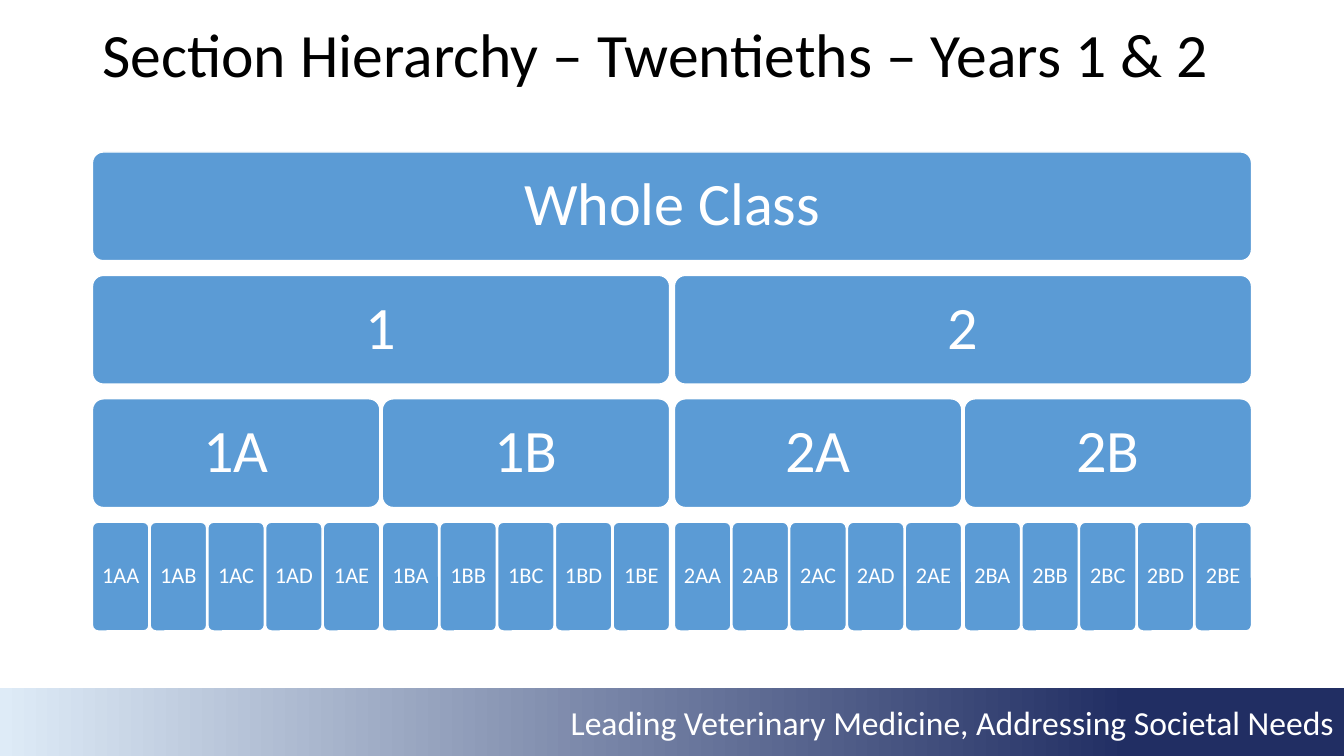
from pptx import Presentation
from pptx.dml.color import RGBColor
from pptx.enum.shapes import MSO_SHAPE
from pptx.enum.text import MSO_ANCHOR, PP_ALIGN
from pptx.util import Cm, Pt

TITLE = "Section Hierarchy – Twentieths – Years 1 & 2"
MOTTO = "Leading Veterinary Medicine, Addressing Societal Needs"
ROOT = "Whole Class"
SUFFIXES = ["12", "AB", "ABCDE"]

FONT = "Calibri"
BLACK, WHITE, BLUE = "000000", "FFFFFF", "5B9BD5"
GRADIENT = [(0.16, "212E63"), (1, "DEEBF7")]
PAGE_WIDTH, PAGE_HEIGHT = 33.87, 19.05
CHART_LEFT, CHART_TOP, CHART_WIDTH = 2.33, 3.83, 29.21
ROW_HEIGHT, ROW_PITCH = 2.74, 3.11
GAPS = [0.12, 0.06, 0.03]
SIZES = [43, 43, 43, 16]
INSETS = [0.53, 0.53, 0.53, 0.1]


def color(value):
    return RGBColor.from_string(value)


def write(shape, text, size, value, align, spacing=1.0):
    frame = shape.text_frame
    frame.word_wrap = True
    frame.vertical_anchor = MSO_ANCHOR.MIDDLE
    frame.text = text
    para = frame.paragraphs[0]
    para.alignment = align
    para.line_spacing = spacing
    span = para.runs[0]
    span.font.name = FONT
    span.font.size = Pt(size)
    span.font.color.rgb = color(value)


def add_block(page, text, left, width, depth):
    block = page.shapes.add_shape(
        MSO_SHAPE.ROUNDED_RECTANGLE, Cm(left), Cm(CHART_TOP + depth * ROW_PITCH),
        Cm(width), Cm(ROW_HEIGHT))
    block.adjustments[0] = 0.1
    block.shadow.inherit = False
    block.fill.solid()
    block.fill.fore_color.rgb = color(BLUE)
    block.line.color.rgb = color(WHITE)
    block.line.width = Pt(1)
    frame = block.text_frame
    frame.margin_left = frame.margin_right = Cm(INSETS[depth])
    frame.margin_top = frame.margin_bottom = Cm(INSETS[depth])
    write(block, text, SIZES[depth], WHITE, PP_ALIGN.CENTER, 0.9)


def add_section(page, name, left, width, depth=0):
    """Draw a section, then its equal subsections in the row below."""
    add_block(page, name or ROOT, left, width, depth)
    if depth == len(SUFFIXES):
        return
    suffixes, gap = SUFFIXES[depth], GAPS[depth]
    part = (width - gap * (len(suffixes) - 1)) / len(suffixes)
    for index, suffix in enumerate(suffixes):
        add_section(page, name + suffix, left + index * (part + gap), part, depth + 1)


def add_footer(page):
    band = page.shapes.add_shape(
        MSO_SHAPE.RECTANGLE, Cm(0), Cm(17.35), Cm(PAGE_WIDTH), Cm(1.7))
    band.shadow.inherit = False
    band.line.fill.background()
    band.fill.gradient()
    band.fill.gradient_angle = 180
    for stop, (position, value) in zip(band.fill.gradient_stops, GRADIENT):
        stop.position = position
        stop.color.rgb = color(value)
    write(band, MOTTO, 24, WHITE, PP_ALIGN.RIGHT)


def main():
    deck = Presentation()
    deck.slide_width, deck.slide_height = Cm(PAGE_WIDTH), Cm(PAGE_HEIGHT)
    page = deck.slides.add_slide(deck.slide_layouts[6])
    add_footer(page)
    title = page.shapes.add_textbox(Cm(CHART_LEFT), Cm(0.41), Cm(CHART_WIDTH), Cm(2.06))
    write(title, TITLE, 44, BLACK, PP_ALIGN.LEFT, 0.9)
    add_section(page, "", CHART_LEFT, CHART_WIDTH)
    deck.save("out.pptx")


if __name__ == "__main__":
    main()
